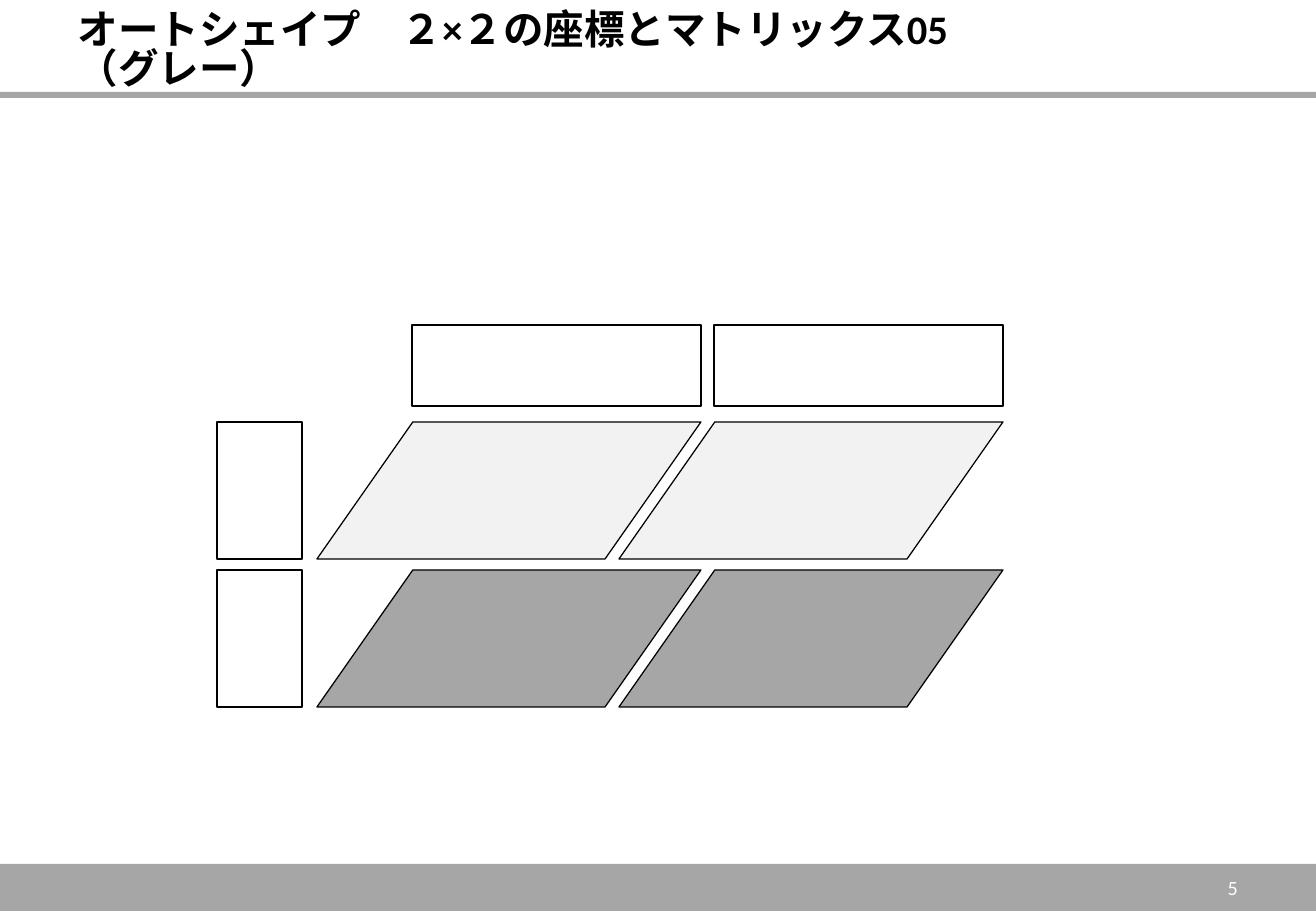
from pptx import Presentation
from pptx.dml.color import RGBColor
from pptx.enum.shapes import MSO_SHAPE as Shape
from pptx.enum.text import MSO_ANCHOR as Anchor, PP_ALIGN as Align
from pptx.util import Pt

EMU_PER_PX = 7526
BLACK = RGBColor(0x00, 0x00, 0x00)
WHITE = RGBColor(0xFF, 0xFF, 0xFF)
LIGHT_GRAY = RGBColor(0xF2, 0xF2, 0xF2)
GRAY = RGBColor(0xA6, 0xA6, 0xA6)

presentation = Presentation()
presentation.slide_width = 1316 * EMU_PER_PX
presentation.slide_height = 911 * EMU_PER_PX
slide = presentation.slides.add_slide(presentation.slide_layouts[6])


def add_box(kind, left, top, width, height, fill, outlined=True):
    box = [length * EMU_PER_PX for length in (left, top, width, height)]
    shape = slide.shapes.add_shape(kind, *box)
    shape.shadow.inherit = False
    shape.fill.solid()
    shape.fill.fore_color.rgb = fill
    if outlined:
        shape.line.color.rgb = BLACK
        shape.line.width = Pt(0.75)
    else:
        shape.line.fill.background()
    return shape


def add_text(text, left, top, width, height, size, color, bold, align):
    box = [length * EMU_PER_PX for length in (left, top, width, height)]
    frame = slide.shapes.add_textbox(*box).text_frame
    frame.word_wrap = True
    frame.vertical_anchor = Anchor.MIDDLE
    paragraph = frame.paragraphs[0]
    paragraph.alignment = align
    run = paragraph.add_run()
    run.text = text
    run.font.name = "Calibri"
    run.font.size = Pt(size)
    run.font.bold = bold
    run.font.color.rgb = color
    return paragraph


# Footer band and title rule
add_box(Shape.RECTANGLE, 0, 864, 1316, 47, GRAY, outlined=False)
add_box(Shape.RECTANGLE, 0, 92, 1316, 6, GRAY, outlined=False)

# Title and page number
title = add_text("オートシェイプ　２×２の座標とマトリックス05（グレー）",
                 66, 19, 953, 67, 24, BLACK, True, Align.LEFT)
title.line_spacing = 0.8
add_text("5", 943, 863, 307, 49, 12, WHITE, False, Align.RIGHT)

# Matrix: slanted cells, row by row
COLUMN_STEP, ROW_STEP = 302, 148
CELL_LEFT, CELL_TOP, CELL_WIDTH, CELL_HEIGHT = 317, 422, 384, 137
for row, fill in enumerate((LIGHT_GRAY, GRAY)):
    for column in range(2):
        cell = add_box(Shape.PARALLELOGRAM, CELL_LEFT + column * COLUMN_STEP,
                       CELL_TOP + row * ROW_STEP, CELL_WIDTH, CELL_HEIGHT, fill)
        cell.adjustments[0] = 0.7

# Column and row headers
for column in range(2):
    add_box(Shape.RECTANGLE, 412 + column * COLUMN_STEP, 325, 289, 81, WHITE)
for row in range(2):
    add_box(Shape.RECTANGLE, 217, CELL_TOP + row * ROW_STEP, 85, CELL_HEIGHT, WHITE)

presentation.save("out.pptx")
